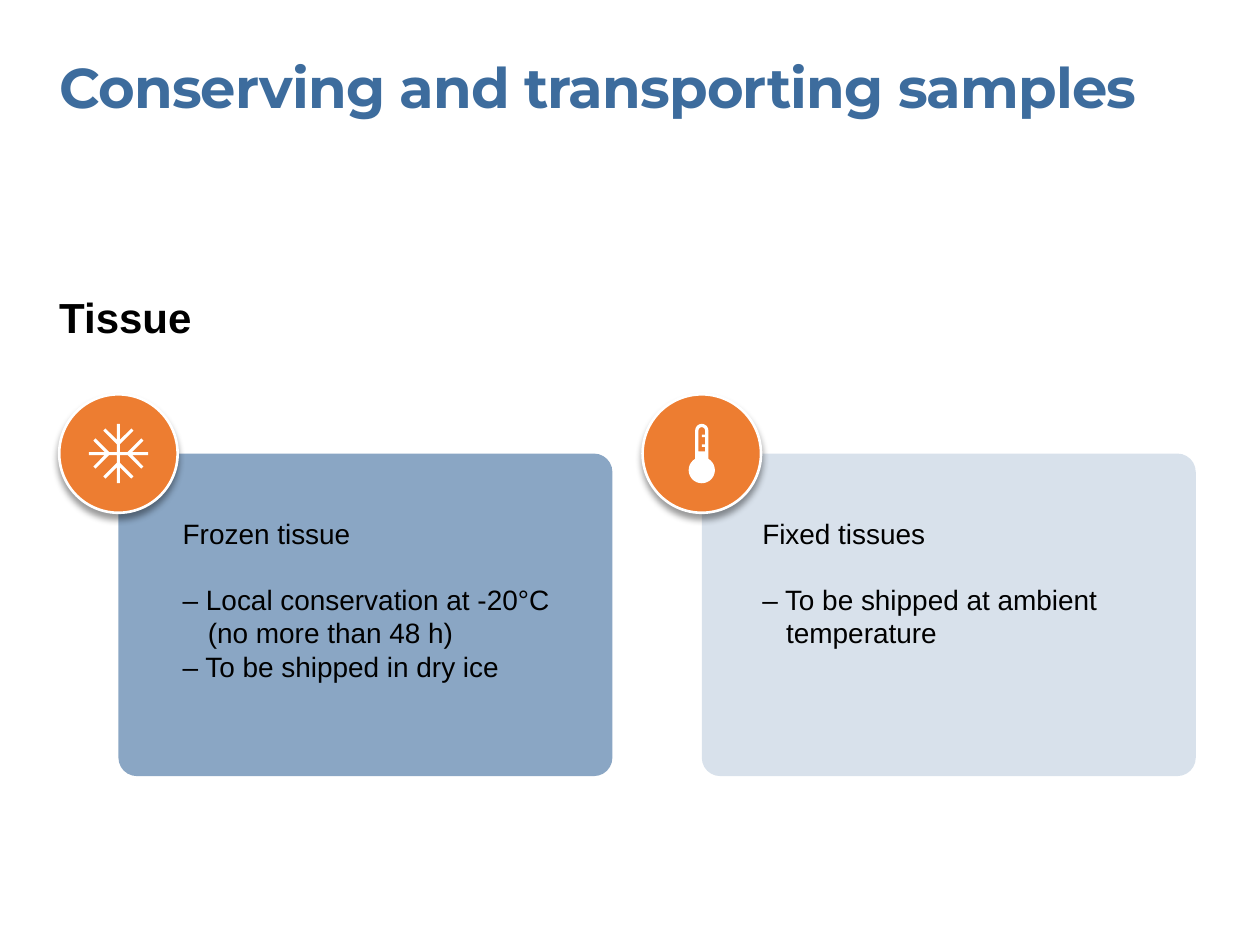
from dataclasses import dataclass
from math import cos, pi, sin

from lxml import etree
from pptx import Presentation
from pptx import util as u
from pptx.dml.color import RGBColor
from pptx.enum import shapes
from pptx.oxml.ns import qn


@dataclass(frozen=True)
class Theme:
    blue: str = "3D6C9D"
    orange: str = "ED7D31"
    white: str = "FFFFFF"
    black: str = "000000"
    title_font: str = "Montserrat"
    body_font: str = "Arial"
    title_size: int = 32
    heading_size: int = 24
    body_size: int = 16
    body_line: float = 18.4


class SlideBuilder:
    def __init__(self, slide, theme):
        self.slide = slide
        self.theme = theme

    def style_paragraph(self, paragraph, size, font, color, bold):
        paragraph.font.size = u.Pt(size)
        paragraph.font.name = font
        paragraph.font.bold = bold
        paragraph.font.color.rgb = RGBColor.from_string(color)

    def text(self, box, lines, size, font=None, color=None, bold=False):
        shape = self.slide.shapes.add_textbox(*map(u.Inches, box))
        frame = shape.text_frame
        frame.word_wrap = True
        frame.margin_left = frame.margin_right = 0
        frame.margin_top = frame.margin_bottom = 0
        frame.text = "\n".join(lines)
        for paragraph in frame.paragraphs:
            self.style_paragraph(paragraph, size, font or self.theme.body_font,
                                 color or self.theme.black, bold)
        return frame.paragraphs

    def title(self, box, line):
        theme = self.theme
        paragraph = self.text(box, [line], theme.title_size, theme.title_font,
                              theme.blue, True)[0]
        paragraph.runs[0]._r.get_or_add_rPr().set("spc", "-50")

    def card_text(self, box, heading, items, indent):
        first, *rest = self.text(box, [heading, *items], self.theme.body_size)
        first.space_after = u.Pt(self.theme.body_line)
        for paragraph in rest:
            properties = paragraph._p.get_or_add_pPr()
            properties.set("marL", str(u.Inches(indent)))
            properties.set("indent", str(-u.Inches(indent)))

    def fill(self, shape, color):
        shape.shadow.inherit = False
        shape.fill.solid()
        shape.fill.fore_color.rgb = RGBColor.from_string(color)
        shape.line.fill.background()

    def card(self, x, y, width, height, opacity):
        shape = self.slide.shapes.add_shape(
            shapes.MSO_SHAPE.ROUNDED_RECTANGLE,
            *map(u.Inches, (x, y, width, height)))
        shape.adjustments[0] = 0.057
        self.fill(shape, self.theme.blue)
        color = shape._element.spPr.find(qn("a:solidFill"))[0]
        etree.SubElement(color, qn("a:alpha"), val=str(opacity * 1000))

    def badge(self, x, y, diameter):
        radius = diameter / 2
        shape = self.slide.shapes.add_shape(
            shapes.MSO_SHAPE.OVAL,
            *map(u.Inches, (x - radius, y - radius, diameter, diameter)))
        self.fill(shape, self.theme.orange)
        shape.line.color.rgb = RGBColor.from_string(self.theme.white)
        shape.line.width = u.Pt(1.5)
        effects = shape._element.spPr.find(qn("a:effectLst"))
        shadow = etree.SubElement(
            effects, qn("a:outerShdw"), blurRad=str(u.Pt(4)),
            dist=str(u.Pt(3)), dir="5400000", algn="ctr", rotWithShape="0")
        color = etree.SubElement(shadow, qn("a:srgbClr"), val=self.theme.black)
        etree.SubElement(color, qn("a:alpha"), val="40000")

    def icon(self, x, y, contours):
        outlines = [[(u.Inches(x + dx / 100), u.Inches(y + dy / 100))
                     for dx, dy in contour] for contour in contours]
        builder = self.slide.shapes.build_freeform(*outlines[0][0])
        builder.add_line_segments(outlines[0][1:])
        for outline in outlines[1:]:
            builder.move_to(*outline[0])
            builder.add_line_segments(outline[1:])
        self.fill(builder.convert_to_shape(), self.theme.white)


def arc(x, y, radius, start, end, steps=24):
    angles = [(start + (end - start) * i / steps) * pi / 180
              for i in range(steps + 1)]
    return [(x + radius * cos(a), y + radius * sin(a)) for a in angles]


def snowflake():
    half_arm = [(-1.2, -1.2), (-1.2, -7.4), (-12, -18.2), (-10.3, -19.9),
                (-1.2, -10.9), (-1.2, -23.5)]
    arm = half_arm + [(-x, y) for x, y in reversed(half_arm)]
    points = []
    for _ in range(4):
        points += arm
        arm = [(-y, x) for x, y in arm]
    return [points]


def thermometer():
    body = arc(0, 13.2, 10.4, -60, 240) + arc(0, -18.3, 5.2, 180, 360)
    tube = [(-2.6, -1.8)] + arc(0, -18.3, 2.6, 180, 360)
    for y in (-13.1, -5.2):
        tube += [(2.6, y - 2), (0, y - 2), (0, y), (2.6, y)]
    tube.append((2.6, -1.8))
    return [body, tube]


def main():
    presentation = Presentation()
    presentation.slide_width = u.Inches(10)
    presentation.slide_height = u.Inches(7.5)
    slide = presentation.slides.add_slide(presentation.slide_layouts[6])
    theme = Theme()
    builder = SlideBuilder(slide, theme)

    builder.title((0.47, 0.42, 8.55, 1.08), "Conserving and transporting samples")
    builder.text((0.47, 2.31, 7.85, 0.4), ["Tissue"], theme.heading_size, bold=True)

    card_top = 3.6
    cards = [
        (0.94, 60, snowflake(), (1.45, 4.1, 3.02, 1.35), "Frozen tissue",
         ["– Local conservation at -20°C (no more than 48 h)",
          "– To be shipped in dry ice"], 0.2),
        (5.57, 20, thermometer(), (6.05, 4.1, 2.97, 1.08), "Fixed tissues",
         ["– To be shipped at ambient temperature"], 0.19),
    ]
    for left, opacity, icon, text_box, heading, items, indent in cards:
        builder.card(left, card_top, 3.92, 2.56, opacity)
        builder.badge(left, card_top, 0.94)
        builder.card_text(text_box, heading, items, indent)
        builder.icon(left, card_top, icon)

    presentation.save("out.pptx")


if __name__ == "__main__":
    main()
